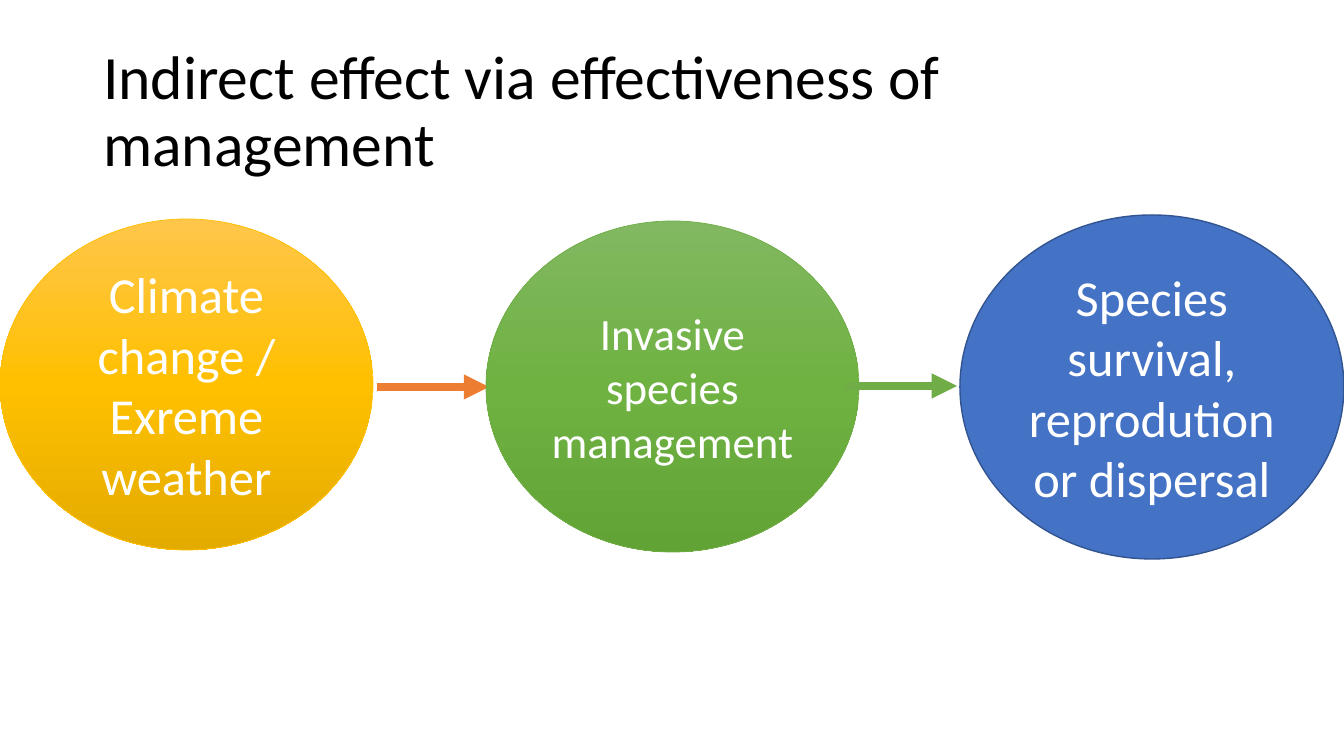
import copy

import pptx
import pptx.dml.color
import pptx.enum.shapes
import pptx.enum.text
import pptx.oxml
import pptx.oxml.ns
import pptx.util

RGBColor = pptx.dml.color.RGBColor
BLACK = RGBColor(0x00, 0x00, 0x00)
WHITE = RGBColor(0xFF, 0xFF, 0xFF)
GOLD = RGBColor(0xFF, 0xC0, 0x00)
GOLD_LIGHT = RGBColor(0xFF, 0xC6, 0x4B)
GOLD_DARK = RGBColor(0xE3, 0xAB, 0x00)
GREEN = RGBColor(0x70, 0xAD, 0x47)
GREEN_LIGHT = RGBColor(0x81, 0xB8, 0x61)
GREEN_MID = RGBColor(0x6F, 0xB2, 0x42)
GREEN_DARK = RGBColor(0x62, 0xA3, 0x36)
BLUE = RGBColor(0x44, 0x72, 0xC4)
BLUE_DARK = RGBColor(0x32, 0x54, 0x91)
ORANGE = RGBColor(0xED, 0x7D, 0x31)


def px(n):
    return pptx.util.Emu(round(n * 914400 / 100.8))


class Deck:
    """Builds the effect diagram in one style on the current slide."""

    font = "Calibri"

    def __init__(self, width, height):
        self.prs = pptx.Presentation()
        self.prs.slide_width, self.prs.slide_height = px(width), px(height)
        self.slide = self.prs.slides.add_slide(self.prs.slide_layouts[5])

    def set_text(self, sp, text, size, color, align):
        tf = sp.text_frame
        tf.text = text
        tf.word_wrap = True
        tf.auto_size = pptx.enum.text.MSO_AUTO_SIZE.NONE
        tf.vertical_anchor = pptx.enum.text.MSO_ANCHOR.MIDDLE
        p = tf.paragraphs[0]
        p.alignment = align
        p.font.name = self.font
        p.font.size = pptx.util.Pt(size)
        p.font.color.rgb = color
        return p

    def title(self, text, x, y, w, h):
        sp = self.slide.shapes.title
        sp.left, sp.top, sp.width, sp.height = map(px, (x, y, w, h))
        p = self.set_text(sp, text, 44, BLACK, pptx.enum.text.PP_ALIGN.LEFT)
        p.line_spacing = 0.9

    def gradient(self, sp, colors):
        sp.fill.gradient()
        sp.fill.gradient_angle = 270
        stops = sp._element.spPr.find(".//" + pptx.oxml.ns.qn("a:gsLst"))
        stops.append(copy.deepcopy(stops[0]))
        for i, (stop, color) in enumerate(zip(sp.fill.gradient_stops, colors)):
            stop.position = i / 2
            stop.color.rgb = color

    def ellipse(self, text, x, y, w, h, size, colors, line, line_width):
        sp = self.slide.shapes.add_shape(
            pptx.enum.shapes.MSO_SHAPE.OVAL, *map(px, (x, y, w, h)))
        sp.shadow.inherit = False
        if len(colors) == 1:
            sp.fill.solid()
            sp.fill.fore_color.rgb = colors[0]
        else:
            self.gradient(sp, colors)
        sp.line.color.rgb = line
        sp.line.width = pptx.util.Pt(line_width)
        self.set_text(sp, text, size, WHITE, pptx.enum.text.PP_ALIGN.CENTER)

    def arrow(self, x, y, length, color):
        sp = self.slide.shapes.add_connector(
            pptx.enum.shapes.MSO_CONNECTOR.STRAIGHT,
            *map(px, (x, y, x + length, y)))
        sp.line.color.rgb = color
        sp.line.width = pptx.util.Pt(6)
        ns = pptx.oxml.ns.nsdecls("a")
        spPr = sp._element.spPr
        ln = spPr.find(pptx.oxml.ns.qn("a:ln"))
        ln.append(pptx.oxml.parse_xml(f'<a:tailEnd {ns} type="triangle"/>'))
        spPr.append(pptx.oxml.parse_xml(f'<a:effectLst {ns}/>'))


def main():
    deck = Deck(1344, 756)
    deck.title("Indirect effect via effectiveness of management",
               93, 40, 1159, 146)
    deck.ellipse("Climate change / Exreme weather", 0, 219, 373, 331, 36,
                 (GOLD_LIGHT, GOLD, GOLD_DARK), GOLD, 0.5)
    deck.ellipse("Species survival, reprodution or dispersal",
                 960, 215, 384, 344, 36, (BLUE,), BLUE_DARK, 1)
    deck.arrow(377, 387, 112, ORANGE)
    deck.ellipse("Invasive species management", 486, 221, 373, 331, 32,
                 (GREEN_LIGHT, GREEN_MID, GREEN_DARK), GREEN, 0.5)
    deck.arrow(845, 386, 112, GREEN)
    deck.prs.save("out.pptx")


if __name__ == "__main__":
    main()
